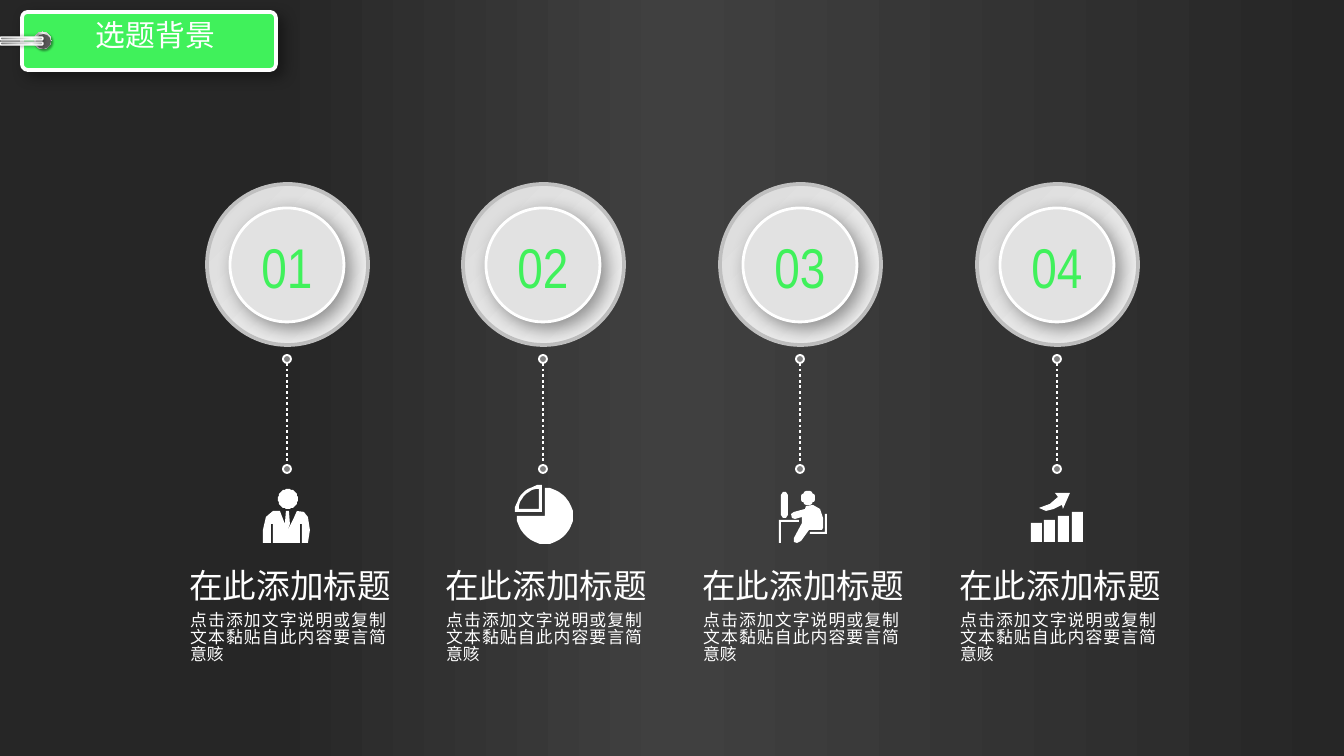
"""Build the topic background slide: a hanging tag above four numbered columns."""
from dataclasses import dataclass
from math import cos, radians, sin
from typing import NamedTuple, Optional

from lxml import etree
from pptx import Presentation
from pptx.dml.color import RGBColor
from pptx.enum.dml import MSO_LINE
from pptx.enum.shapes import MSO_CONNECTOR, MSO_SHAPE
from pptx.enum.text import MSO_AUTO_SIZE, PP_ALIGN
from pptx.oxml.ns import qn
from pptx.util import Emu, Pt

ELLIPSE, RECT, ROUNDED = MSO_SHAPE.OVAL, MSO_SHAPE.RECTANGLE, MSO_SHAPE.ROUNDED_RECTANGLE
STRAIGHT = MSO_CONNECTOR.STRAIGHT
DOTTED = MSO_LINE.ROUND_DOT
LEFT, CENTER, JUSTIFY = PP_ALIGN.LEFT, PP_ALIGN.CENTER, PP_ALIGN.JUSTIFY
GROW = MSO_AUTO_SIZE.SHAPE_TO_FIT_TEXT

SCALE = 9144000 / 1344
COLORS = {
    "green": "40F15B", "white": "FFFFFF", "black": "000000", "edge": "262626",
    "glow": "404040", "hole": "595959", "dot": "808080", "steel": "A6A6A6",
    "rim": "BFBFBF", "silver": "D9D9D9", "face": "E2E2E2", "pale": "F2F2F2",
}
CJK, NARROW = "Noto Sans CJK SC", "Arial Narrow"
HEADING = "在此添加标题"
BODY = "点击添加文字说明或复制文本黏贴自此内容要言简意赅"
Point = tuple[int, int]
Contour = list[Point]


class Box(NamedTuple):
    left: int
    top: int
    width: int
    height: int


@dataclass(frozen=True)
class Gradient:
    stops: tuple[tuple[int, str], ...]
    angle: int


@dataclass(frozen=True)
class Shadow:
    blur: int
    distance: int
    angle: int


@dataclass(frozen=True)
class Style:
    fill: str | Gradient
    line: Optional[str] = None
    weight: float = 0
    shadow: Optional[Shadow] = None
    corner: float = 0.5


@dataclass(frozen=True)
class TextStyle:
    size: int
    font: str
    color: str
    align: PP_ALIGN
    spacing: float = 1.0


@dataclass(frozen=True)
class Column:
    number: str
    icon: list[list[Contour]]


BACKDROP = Gradient(((0, "edge"), (20, "edge"), (50, "glow"), (100, "edge")), 0)
METAL = Gradient(((0, "white"), (17, "steel"), (35, "pale"), (55, "steel"),
                  (75, "pale"), (100, "steel")), 315)
ROD_METAL = Gradient(((0, "dot"), (23, "steel"), (52, "silver"), (74, "white"), (100, "steel")), 0)
TAG = Style("green", "white", 2, Shadow(8, 4, 45), 0.1)
EYELET = Style(METAL, shadow=Shadow(1, 1, 45))
ROD = Style(ROD_METAL, "white", 0.75, Shadow(2, 0, 0))
RING = Style(Gradient(((0, "silver"), (100, "pale")), 45), "rim", 2)
DISC = Style("face", "white", 1.5, Shadow(10, 4, 45))
DOT = Style("dot", "white", 1)
SOLID = Style("white")
TITLE_TEXT = TextStyle(16, CJK, "white", CENTER, 0.85)
NUMBER_TEXT = TextStyle(30, NARROW, "green", CENTER)
HEADING_TEXT = TextStyle(18, CJK, "white", LEFT, 0.85)
BODY_TEXT = TextStyle(9, CJK, "white", JUSTIFY, 0.85)


def px(length: int) -> Emu:
    """Turn px into EMU."""
    return Emu(round(length * SCALE))


def rgb(name: str) -> RGBColor:
    """Look up a palette colour."""
    return RGBColor.from_string(COLORS[name])


def arc(x: int, y: int, radius: int, start: int, end: int) -> Contour:
    """Sample an arc every ten degrees, clockwise from the right."""
    return [(round(x + radius * cos(radians(a))), round(y + radius * sin(radians(a))))
            for a in range(start, end + 1, 10)]


def paint_gradient(fill, root, gradient: Gradient) -> None:
    """Fill with a linear gradient of any number of stops."""
    fill.gradient()
    fill.gradient_angle = -gradient.angle % 360
    stop_list = next(root.iter(qn("a:gsLst")))
    stop_list.clear()
    for position, name in gradient.stops:
        stop = etree.SubElement(stop_list, qn("a:gs"), pos=str(position * 1000))
        etree.SubElement(stop, qn("a:srgbClr"), val=COLORS[name])


def apply_style(shape, style: Style) -> None:
    """Set fill, outline and shadow."""
    shape.shadow.inherit = False
    if isinstance(style.fill, Gradient):
        paint_gradient(shape.fill, shape._element, style.fill)
    else:
        shape.fill.solid()
        shape.fill.fore_color.rgb = rgb(style.fill)
    if style.line:
        shape.line.color.rgb = rgb(style.line)
        shape.line.width = Pt(style.weight)
    else:
        shape.line.fill.background()
    if style.shadow:
        effects = shape._element.spPr.find(qn("a:effectLst"))
        outer = etree.SubElement(
            effects, qn("a:outerShdw"), blurRad=str(Pt(style.shadow.blur)),
            dist=str(Pt(style.shadow.distance)), dir=str(style.shadow.angle * 60000),
            algn="tl", rotWithShape="0")
        tint = etree.SubElement(outer, qn("a:srgbClr"), val=COLORS["black"])
        etree.SubElement(tint, qn("a:alpha"), val="40000")


def draw_shape(slide, kind: MSO_SHAPE, box: Box, style: Style) -> None:
    """Draw a styled preset shape."""
    shape = slide.shapes.add_shape(kind, *map(px, box))
    if kind == ROUNDED:
        shape.adjustments[0] = style.corner
    apply_style(shape, style)


def draw_silhouette(slide, contours: list[Contour]) -> None:
    """Draw closed contours as one white outline shape."""
    first, *others = [[(px(x), px(y)) for x, y in contour] for contour in contours]
    builder = slide.shapes.build_freeform(*first[0], scale=1.0)
    builder.add_line_segments(first[1:], close=True)
    for contour in others:
        builder.move_to(*contour[0])
        builder.add_line_segments(contour[1:], close=True)
    apply_style(builder.convert_to_shape(), SOLID)


def draw_text(slide, box: Box, text: str, style: TextStyle) -> None:
    """Draw one paragraph of one run."""
    frame = slide.shapes.add_textbox(*map(px, box)).text_frame
    frame.word_wrap = True
    frame.auto_size = GROW
    paragraph = frame.paragraphs[0]
    paragraph.alignment = style.align
    paragraph.line_spacing = style.spacing
    run = paragraph.add_run()
    run.text = text
    run.font.size = Pt(style.size)
    run.font.name = style.font
    run.font.color.rgb = rgb(style.color)
    etree.SubElement(run.font._element, qn("a:ea"), typeface=style.font)


def draw_stem(slide, x: int, top: int, bottom: int) -> None:
    """Draw a dotted vertical line between two dots."""
    draw_shape(slide, ELLIPSE, Box(x - 4, top, 8, 8), DOT)
    stem = slide.shapes.add_connector(STRAIGHT, px(x), px(top + 8), px(x), px(bottom + 8))
    stem.line.color.rgb = rgb("white")
    stem.line.width = Pt(1.5)
    stem.line.dash_style = DOTTED
    etree.SubElement(stem._element.spPr, qn("a:effectLst"))
    draw_shape(slide, ELLIPSE, Box(x - 4, bottom, 8, 8), DOT)


def draw_column(slide, column: Column, offset: int) -> None:
    """Draw one numbered column shifted right by the offset."""
    draw_shape(slide, ELLIPSE, Box(207 + offset, 184, 161, 161), RING)
    draw_shape(slide, ELLIPSE, Box(230 + offset, 208, 114, 114), DISC)
    draw_text(slide, Box(240 + offset, 226, 94, 82), column.number, NUMBER_TEXT)
    draw_text(slide, Box(176 + offset, 564, 239, 54), HEADING, HEADING_TEXT)
    draw_text(slide, Box(177 + offset, 606, 222, 75), BODY, BODY_TEXT)
    for contours in column.icon:
        draw_silhouette(slide, contours)
    draw_stem(slide, 287 + offset, 355, 465)


SUIT = [(297, 511), (293, 520), (287, 532), (290, 524), (289, 511), (286, 511), (285, 524),
        (280, 511), (273, 511), (266, 517), (263, 530), (263, 543), (271, 543), (271, 524),
        (273, 524), (273, 543), (300, 543), (300, 524), (302, 524), (302, 543), (308, 543),
        (310, 530), (308, 517), (304, 512)]
SLICE = [arc(542, 512, 27, 180, 270) + [(542, 512)], [(539, 509)] + arc(539, 509, 20, 180, 270)[::-1]]
DESK = [(779, 543), (779, 520), (799, 520), (799, 522), (781, 522), (781, 543)]
SCREEN = [(781, 495), (783, 492), (786, 492), (788, 495), (788, 515), (786, 518), (783, 518), (781, 515)]
SITTER = [(794, 538), (794, 542), (797, 543), (801, 541), (809, 530), (822, 530), (823, 528),
          (823, 518), (820, 509), (813, 505), (806, 506), (805, 509), (794, 512), (791, 514),
          (792, 518), (795, 519), (802, 517), (802, 523)]
CHAIR = [(810, 532), (825, 532), (825, 514), (827, 514), (827, 534), (810, 534)]
ARROW = [(1058, 497), (1050, 504), (1039, 508), (1046, 511), (1054, 509), (1062, 505),
         (1063, 509), (1070, 493), (1055, 493)]
COLUMNS = [
    Column("01", [[arc(288, 499, 10, 0, 350)], [SUIT]]),
    Column("02", [[arc(545, 516, 28, -90, 180) + [(545, 516)]], SLICE]),
    Column("03", [[DESK], [SCREEN], [SITTER, arc(808, 498, 7, 0, 350)], [CHAIR]]),
    Column("04", [[ARROW]]),
]


def main() -> None:
    """Build and save the slide."""
    deck = Presentation()
    deck.slide_width, deck.slide_height = px(1344), px(756)
    slide = deck.slides.add_slide(deck.slide_layouts[6])
    paint_gradient(slide.background.fill, slide._element, BACKDROP)
    draw_shape(slide, ROUNDED, Box(22, 12, 254, 58), TAG)
    draw_shape(slide, ELLIPSE, Box(34, 32, 17, 17), EYELET)
    draw_shape(slide, ELLIPSE, Box(36, 34, 15, 15), Style("hole"))
    for top in (42, 37):
        draw_shape(slide, ROUNDED, Box(0, top, 43, 3), ROD)
    draw_text(slide, Box(36, 16, 239, 50), "选题背景", TITLE_TEXT)
    for index, column in enumerate(COLUMNS):
        draw_column(slide, column, index * 770 // 3)
    for index, height in enumerate((19, 22, 26, 30)):
        draw_shape(slide, RECT, Box(1031 + index * 41 // 3, 542 - height, 11, height), SOLID)
    deck.save("out.pptx")


if __name__ == "__main__":
    main()
